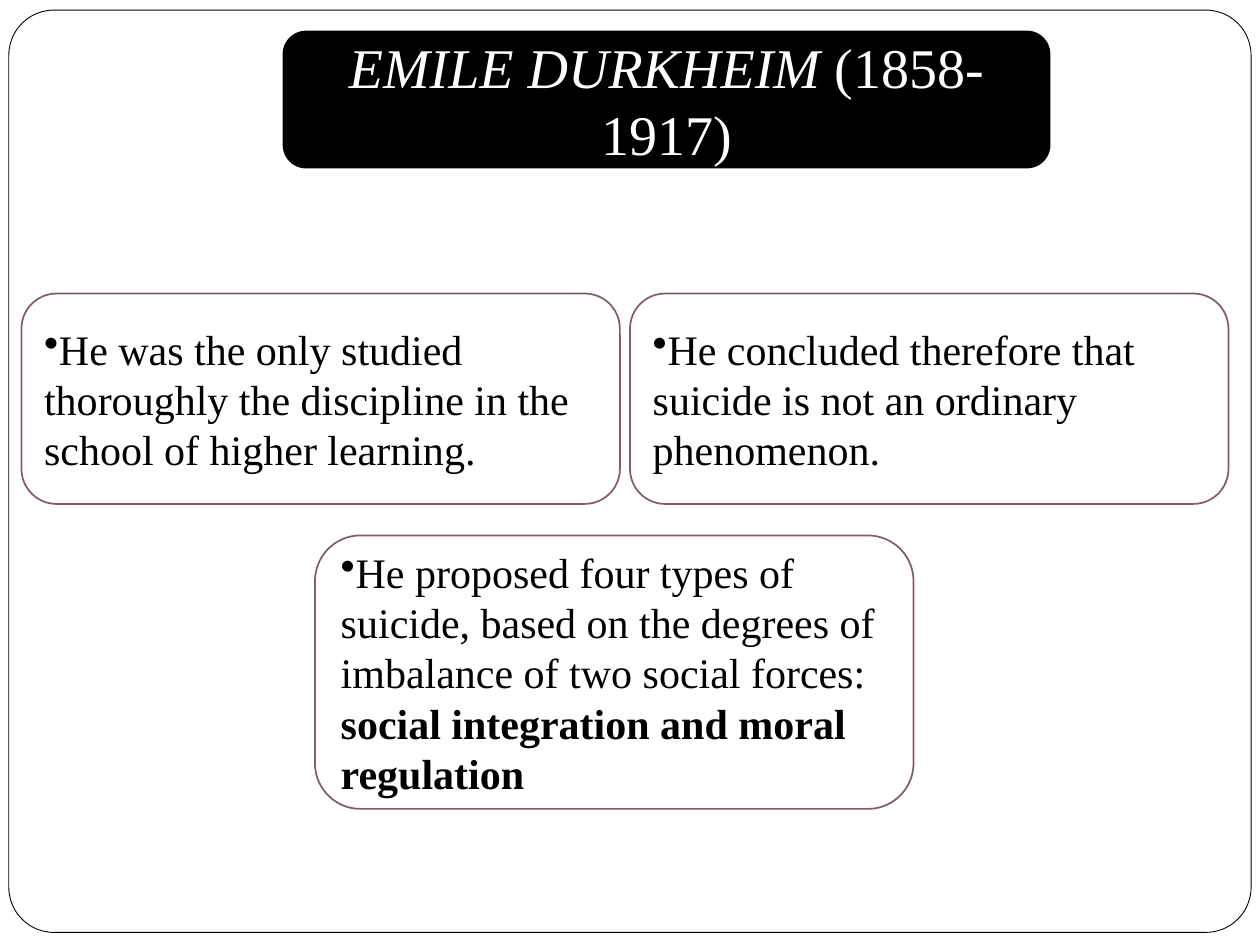
from lxml import etree
from pptx import Presentation
from pptx.dml.color import RGBColor
from pptx.enum.shapes import MSO_SHAPE
from pptx.enum.text import MSO_ANCHOR, MSO_AUTO_SIZE, PP_ALIGN
from pptx.oxml.ns import qn
from pptx.util import Inches, Pt

ROUNDED = MSO_SHAPE.ROUNDED_RECTANGLE
TITLE_BAR = MSO_SHAPE.FLOWCHART_ALTERNATE_PROCESS
COLORS = {"black": "000000", "white": "FFFFFF", "border": "855D5D"}
FONT = "Times New Roman"
TITLE_AREA = (2.25, 0.25, 6.08, 1.08)

presentation = Presentation()
presentation.slide_width = Inches(10)
presentation.slide_height = Inches(7.5)
slide = presentation.slides.add_slide(presentation.slide_layouts[5])


def add_box(kind, area, fill, line, line_width=1):
    shape = slide.shapes.add_shape(kind, *map(Inches, area))
    shape.shadow.inherit = False
    shape.fill.solid()
    shape.fill.fore_color.rgb = RGBColor.from_string(COLORS[fill])
    shape.line.color.rgb = RGBColor.from_string(COLORS[line])
    shape.line.width = Pt(line_width)
    return shape


def write_text(shape, runs, size, color, align, bullet=False):
    """Fill the shape with one paragraph of (text, bold, italic) runs."""
    frame = shape.text_frame
    frame.word_wrap = True
    frame.auto_size = MSO_AUTO_SIZE.NONE
    frame.vertical_anchor = MSO_ANCHOR.MIDDLE
    paragraph = frame.paragraphs[0]
    paragraph.alignment = align
    if bullet:
        properties = paragraph._p.get_or_add_pPr()
        etree.SubElement(properties, qn("a:buChar")).set("char", "•")
    for text, bold, italic in runs:
        run = paragraph.add_run()
        run.text = text
        run.font.name = FONT
        run.font.size = Pt(size)
        run.font.bold = bold
        run.font.italic = italic
        run.font.color.rgb = RGBColor.from_string(COLORS[color])


border = add_box(ROUNDED, (0.07, 0.08, 9.86, 7.32), "white", "black", 0.5)
border.adjustments[0] = 0.049

# The title sits on a black bar, so it moves in front of it
title_bar = add_box(TITLE_BAR, TITLE_AREA, "black", "black")
title = slide.shapes.title
title.left, title.top, title.width, title.height = map(Inches, TITLE_AREA)
title_bar._element.addnext(title._element)
write_text(title, [("EMILE DURKHEIM ", False, True), ("(1858-1917)", False, False)],
           size=32, color="white", align=PP_ALIGN.CENTER)

CARD_WIDTH = 4.75
cards = [
    (0.17, 2.33, 1.67, [
        ("He was the only studied thoroughly the discipline in the "
         "school of higher learning.", False, False)]),
    (5, 2.33, 1.67, [
        ("He concluded therefore that suicide is not an ordinary "
         "phenomenon.", False, False)]),
    (2.5, 4.25, 2.17, [
        ("He proposed four types of suicide, based on the degrees of "
         "imbalance of two social forces: ", False, False),
        ("social integration and moral regulation", True, False)]),
]
for left, top, height, runs in cards:
    card = add_box(ROUNDED, (left, top, CARD_WIDTH, height), "white", "border")
    write_text(card, runs, size=24, color="black", align=PP_ALIGN.LEFT, bullet=True)

presentation.save("out.pptx")
